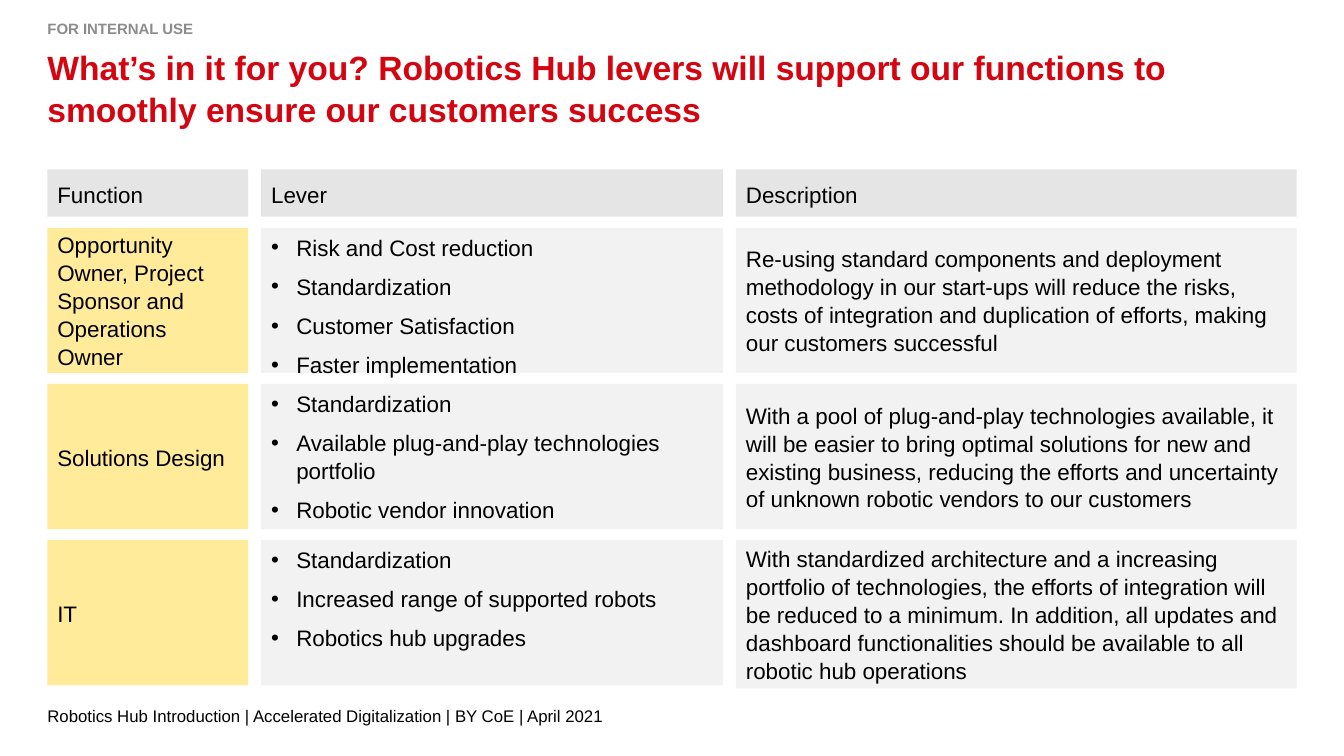
from lxml.etree import SubElement
from pptx import Presentation
from pptx.dml.color import RGBColor
from pptx.enum.shapes import MSO_SHAPE
from pptx.enum.text import MSO_ANCHOR, MSO_AUTO_SIZE, PP_ALIGN
from pptx.oxml.ns import qn
from pptx.util import Inches, Pt

RED = RGBColor(0xD4, 0x05, 0x11)
BLACK = RGBColor(0x00, 0x00, 0x00)
GREY = RGBColor(0x8C, 0x8C, 0x8C)
HEADER_GREY = RGBColor(0xE5, 0xE5, 0xE5)
CELL_GREY = RGBColor(0xF2, 0xF2, 0xF2)
YELLOW = RGBColor(0xFF, 0xEB, 0x99)

LEFT = 0.47
COLUMNS = [(LEFT, 1.99), (2.59, 4.58), (7.3, 5.56)]
HEADER_TOP, HEADER_HEIGHT = 1.68, 0.47
FIRST_ROW_TOP, ROW_PITCH, ROW_HEIGHT = 2.26, 1.55, 1.44
LAST_DESCRIPTION_HEIGHT = 1.47

HEADINGS = ["Function", "Lever", "Description"]
ROWS = [
    (
        "Opportunity Owner, Project Sponsor and Operations Owner",
        ["Risk and Cost reduction", "Standardization", "Customer Satisfaction", "Faster implementation"],
        "Re-using standard components and deployment methodology in our start-ups will reduce the risks, "
        "costs of integration and duplication of efforts, making our customers successful",
    ),
    (
        "Solutions Design",
        ["Standardization", "Available plug-and-play technologies portfolio", "Robotic vendor innovation"],
        "With a pool of plug-and-play technologies available, it will be easier to bring optimal solutions "
        "for new and existing business, reducing the efforts and uncertainty of unknown robotic vendors "
        "to our customers",
    ),
    (
        "IT",
        ["Standardization", "Increased range of supported robots", "Robotics hub upgrades"],
        "With standardized architecture and a increasing portfolio of technologies, the efforts of "
        "integration will be reduced to a minimum. In addition, all updates and dashboard functionalities "
        "should be available to all robotic hub operations",
    ),
]


def write_text(frame, lines, size=16, color=BLACK, bold=False, anchor=MSO_ANCHOR.MIDDLE,
               insets=(0, 0, 0, 0), space_after=0, bullets=False, font="Arial"):
    frame.word_wrap = True
    frame.auto_size = MSO_AUTO_SIZE.NONE
    frame.vertical_anchor = anchor
    frame.margin_left, frame.margin_top, frame.margin_right, frame.margin_bottom = map(Inches, insets)
    for index, line in enumerate(lines):
        paragraph = frame.add_paragraph() if index else frame.paragraphs[0]
        paragraph.text = line
        paragraph.alignment = PP_ALIGN.LEFT
        paragraph.line_spacing = 1.04
        paragraph.space_before = Pt(0)
        paragraph.space_after = Pt(space_after)
        if bullets:
            properties = paragraph._p.get_or_add_pPr()
            properties.set("marL", str(Inches(0.25)))
            properties.set("indent", str(-Inches(0.25)))
            SubElement(properties, qn("a:buFont"), typeface=font)
            SubElement(properties, qn("a:buChar"), char="•")
        paragraph.font.name = font
        paragraph.font.size = Pt(size)
        paragraph.font.bold = bold
        paragraph.font.color.rgb = color


class LeverSlide:
    def __init__(self, presentation):
        self.slide = presentation.slides.add_slide(presentation.slide_layouts[5])

    def title(self, text, left, top, width, height):
        title = self.slide.shapes.title
        title.left, title.top, title.width, title.height = map(Inches, (left, top, width, height))
        write_text(title.text_frame, [text], size=24, color=RED, bold=True, anchor=MSO_ANCHOR.BOTTOM)

    def label(self, text, left, top, width, height, **style):
        label = self.slide.shapes.add_textbox(*map(Inches, (left, top, width, height)))
        write_text(label.text_frame, [text], **style)

    def cell(self, lines, column, top, height, fill, insets=(0.1, 0.1, 0.1, 0.1), space_after=8, **style):
        left, width = column
        cell = self.slide.shapes.add_shape(
            MSO_SHAPE.RECTANGLE, *map(Inches, (left, top, width, height)))
        cell.shadow.inherit = False
        cell.fill.solid()
        cell.fill.fore_color.rgb = fill
        cell.line.fill.background()
        write_text(cell.text_frame, lines, insets=insets, space_after=space_after, **style)

    def lever_list(self, levers, column, top, height):
        self.cell(levers, column, top, height, CELL_GREY, insets=(0.1, 0.05, 0.1, 0.1),
                  anchor=MSO_ANCHOR.TOP, bullets=True)


def main():
    presentation = Presentation()
    presentation.slide_width, presentation.slide_height = Inches(13.33), Inches(7.5)
    page = LeverSlide(presentation)
    page.label("FOR INTERNAL USE", LEFT, 0.17, 3.99, 0.21, size=10.7, color=GREY, bold=True)
    page.title("What’s in it for you? Robotics Hub levers will support our functions to "
               "smoothly ensure our customers success", LEFT, 0.56, 12.39, 0.72)

    for heading, column in zip(HEADINGS, COLUMNS):
        page.cell([heading], column, HEADER_TOP, HEADER_HEIGHT, HEADER_GREY,
                  insets=(0.1, 0.03, 0.07, 0), space_after=6.7)

    function_column, lever_column, description_column = COLUMNS
    for index, (function, levers, description) in enumerate(ROWS):
        top = FIRST_ROW_TOP + index * ROW_PITCH
        is_last = index == len(ROWS) - 1
        description_height = LAST_DESCRIPTION_HEIGHT if is_last else ROW_HEIGHT
        page.cell([function], function_column, top, ROW_HEIGHT, YELLOW)
        page.lever_list(levers, lever_column, top, ROW_HEIGHT)
        page.cell([description], description_column, top, description_height, CELL_GREY)

    page.label("Robotics Hub Introduction | Accelerated Digitalization | BY CoE | April 2021",
               LEFT, 7, 11.84, 0.2, size=12)
    presentation.save("out.pptx")


if __name__ == "__main__":
    main()
